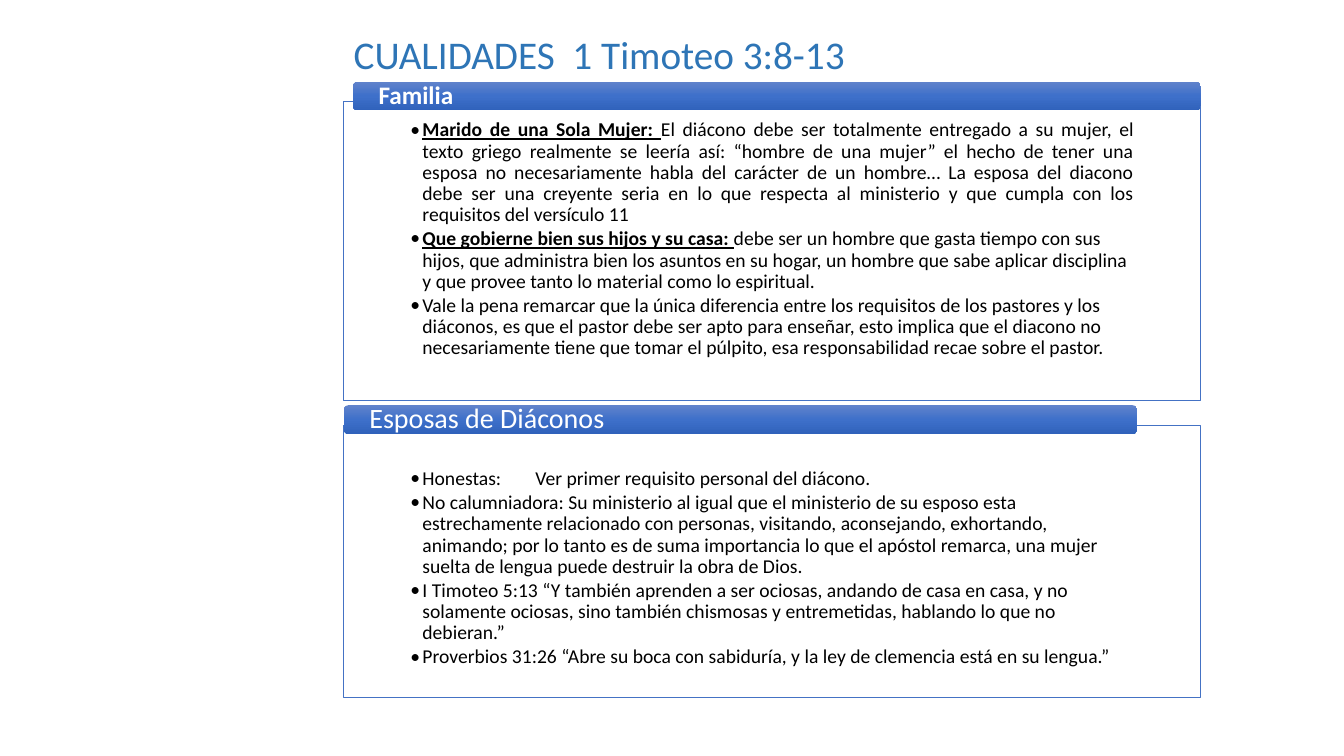
"""Build the slide on the qualities of deacons and their wives."""
from copy import deepcopy
from dataclasses import dataclass

from lxml import etree
from pptx import Presentation
from pptx.dml.color import RGBColor
from pptx.enum.shapes import MSO_SHAPE
from pptx.enum.text import MSO_ANCHOR, PP_ALIGN
from pptx.oxml.ns import qn
from pptx.util import Inches, Pt

RECT, ROUND = MSO_SHAPE.RECTANGLE, MSO_SHAPE.ROUNDED_RECTANGLE
TOP, MIDDLE, BOTTOM = MSO_ANCHOR.TOP, MSO_ANCHOR.MIDDLE, MSO_ANCHOR.BOTTOM
LEFT, JUSTIFY = PP_ALIGN.LEFT, PP_ALIGN.JUSTIFY

WIDTH, HEIGHT = Inches(13.33), Inches(7.5)
PANEL_LEFT, PANEL_WIDTH = 25.58, 63.77
HEADER_RISE, HEADER_HEIGHT = 2.67, 3.8
INDENT, TAB = Inches(0.12), Inches(1.24)
GRADIENT = ((0, "6183CB"), (0.5, "3E70CA"), (1, "3062BB"))


@dataclass
class Box:
    left: float
    top: float
    width: float
    height: float

    def emu(self) -> tuple:
        """Turn percentages of the slide into lengths."""
        return (int(WIDTH * self.left / 100), int(HEIGHT * self.top / 100),
                int(WIDTH * self.width / 100), int(HEIGHT * self.height / 100))


@dataclass
class Item:
    text: str
    lead: str = ""
    align: PP_ALIGN = LEFT


@dataclass
class Panel:
    title: str
    size: int
    bold: bool
    header_left: float
    header_width: float
    top: float
    height: float
    inset_top: float
    items: list[Item]


PANELS = [
    Panel("Familia", 18, True, 26.26, 63.09, 13.47, 39.47, 0.18, [
        Item("El diácono debe ser totalmente entregado a su mujer, el texto griego "
             "realmente se leería así: “hombre de una mujer” el hecho de tener una esposa "
             "no necesariamente habla del carácter de un hombre… La esposa del diacono "
             "debe ser una creyente seria en lo que respecta al ministerio y que cumpla "
             "con los requisitos del versículo 11", "Marido de una Sola Mujer: ", JUSTIFY),
        Item("debe ser un hombre que gasta tiempo con sus hijos, que administra bien los "
             "asuntos en su hogar, un hombre que sabe aplicar disciplina y que provee "
             "tanto lo material como lo espiritual.",
             "Que gobierne bien sus hijos y su casa: "),
        Item("Vale la pena remarcar que la única diferencia entre los requisitos de los "
             "pastores y los diáconos, es que el pastor debe ser apto para enseñar, esto "
             "implica que el diacono no necesariamente tiene que tomar el púlpito, esa "
             "responsabilidad recae sobre el pastor."),
    ]),
    Panel("Esposas de Diáconos", 20, False, PANEL_LEFT, 59.04, 56.27, 36, 0.43, [
        Item("Honestas:\tVer primer requisito personal del diácono."),
        Item("No calumniadora: Su ministerio al igual que el ministerio de su esposo esta "
             "estrechamente relacionado con personas, visitando, aconsejando, exhortando, "
             "animando; por lo tanto es de suma importancia lo que el apóstol remarca, una "
             "mujer suelta de lengua puede destruir la obra de Dios."),
        Item("I Timoteo 5:13 “Y también aprenden a ser ociosas, andando de casa en casa, y "
             "no solamente ociosas, sino también chismosas y entremetidas, hablando lo que "
             "no debieran.”"),
        Item("Proverbios 31:26 “Abre su boca con sabiduría, y la ley de clemencia está en "
             "su lengua.”"),
    ]),
]


def color(value: str) -> RGBColor:
    """Read a hex colour."""
    return RGBColor.from_string(value)


def set_frame(tf, anchor, left: float, top: float, bottom: float) -> None:
    """Set wrapping, anchor and margins in inches."""
    values = {"word_wrap": True, "vertical_anchor": anchor,
              "margin_left": Inches(left), "margin_right": Inches(left),
              "margin_top": Inches(top), "margin_bottom": Inches(bottom)}
    for name, value in values.items():
        setattr(tf, name, value)


def set_paragraph(p, align=LEFT, after: float = 0) -> None:
    """Set alignment and spacing."""
    values = {"alignment": align, "line_spacing": 0.9, "space_after": Pt(after)}
    for name, value in values.items():
        setattr(p, name, value)


def add_run(p, text: str, size: int, hue: str, bold=False, underline=False) -> None:
    """Append a formatted run."""
    r = p.add_run()
    r.text = text
    r.font.color.rgb = color(hue)
    values = {"name": "Calibri", "size": Pt(size), "bold": bold, "underline": underline}
    for name, value in values.items():
        setattr(r.font, name, value)


def add_bullet(p) -> None:
    """Give a paragraph a hanging bullet and a tab stop."""
    pPr = p._p.get_or_add_pPr()
    pPr.set("marL", str(INDENT))
    pPr.set("indent", str(-INDENT))
    etree.SubElement(pPr, qn("a:buFont"), typeface="Calibri")
    etree.SubElement(pPr, qn("a:buChar"), char="•")
    tabs = etree.SubElement(pPr, qn("a:tabLst"))
    etree.SubElement(tabs, qn("a:tab"), pos=str(TAB), algn="l")


def add_body(slide, panel: Panel) -> None:
    """Draw the outlined box with its bullets."""
    box = Box(PANEL_LEFT, panel.top, PANEL_WIDTH, panel.height)
    s = slide.shapes.add_shape(RECT, *box.emu())
    s.shadow.inherit = False
    s.fill.solid()
    s.fill.fore_color.rgb = color("FFFFFF")
    white = s._element.spPr.find(qn("a:solidFill"))[0]
    etree.SubElement(white, qn("a:alpha"), val="90000")
    s.line.color.rgb = color("4472C4")
    s.line.width = Pt(0.5)
    tf = s.text_frame
    set_frame(tf, TOP, 0.66, panel.inset_top, 0.11)
    for i, item in enumerate(panel.items):
        p = tf.add_paragraph() if i else tf.paragraphs[0]
        set_paragraph(p, item.align, 2.1)
        add_bullet(p)
        if item.lead:
            add_run(p, item.lead, 14, "000000", True, True)
        add_run(p, item.text, 14, "000000")


def add_header(slide, panel: Panel) -> None:
    """Draw the gradient bar with the panel title."""
    box = Box(panel.header_left, panel.top - HEADER_RISE, panel.header_width, HEADER_HEIGHT)
    s = slide.shapes.add_shape(ROUND, *box.emu())
    s.shadow.inherit = False
    s.line.fill.background()
    s.fill.gradient()
    s.fill.gradient_angle = 270
    stops = s._element.spPr.find(qn("a:gradFill")).find(qn("a:gsLst"))
    stops.insert(1, deepcopy(stops[0]))
    for stop, (position, hue) in zip(s.fill.gradient_stops, GRADIENT):
        stop.position = position
        stop.color.rgb = color(hue)
    set_frame(s.text_frame, MIDDLE, 0.24, 0, 0)
    p = s.text_frame.paragraphs[0]
    set_paragraph(p)
    add_run(p, panel.title, panel.size, "FFFFFF", panel.bold)


def add_title(slide) -> None:
    """Write the slide title."""
    s = slide.shapes.add_textbox(*Box(PANEL_LEFT, -1.47, 70.82, 12.4).emu())
    set_frame(s.text_frame, BOTTOM, 0.1, 0.05, 0.05)
    p = s.text_frame.paragraphs[0]
    set_paragraph(p)
    add_run(p, "CUALIDADES  1 Timoteo 3:8-13", 28, "2E75B6")


def main() -> None:
    """Build and save the presentation."""
    prs = Presentation()
    prs.slide_width, prs.slide_height = WIDTH, HEIGHT
    slide = prs.slides.add_slide(prs.slide_layouts[6])
    for panel in PANELS:
        add_body(slide, panel)
        add_header(slide, panel)
    add_title(slide)
    prs.save("out.pptx")


if __name__ == "__main__":
    main()
